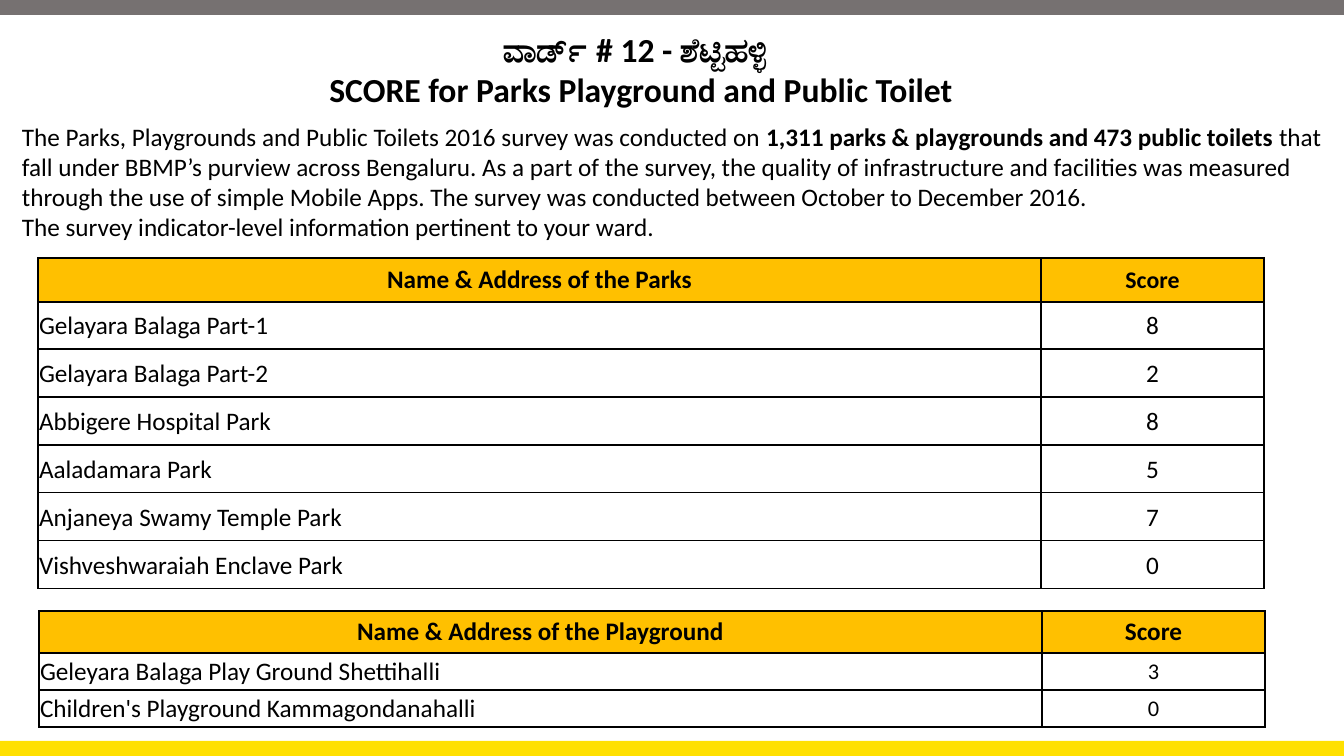
import dataclasses

import lxml.etree
import pptx
import pptx.dml.color
import pptx.enum.shapes
import pptx.enum.text
import pptx.oxml.ns
import pptx.util

EMU_PER_PX = 914400 / 100.8


def px(length):
    return pptx.util.Emu(round(length * EMU_PER_PX))


def rgb(value):
    return pptx.dml.color.RGBColor.from_string(value)


@dataclasses.dataclass(frozen=True)
class Theme:
    font: str = "Calibri"
    ink: str = "000000"
    paper: str = "FFFFFF"
    header: str = "FFC000"
    top_band: str = "767171"
    bottom_band: str = "FFE000"
    title_size: int = 24
    body_size: int = 18
    small_header_size: int = 17
    small_score_size: int = 16
    border_width: int = 1


class SlideBuilder:
    def __init__(self, slide, theme):
        self.slide = slide
        self.theme = theme

    def band(self, left, top, width, height, color):
        shape = self.slide.shapes.add_shape(
            pptx.enum.shapes.MSO_SHAPE.RECTANGLE, px(left), px(top), px(width), px(height)
        )
        shape.shadow.inherit = False
        shape.fill.solid()
        shape.fill.fore_color.rgb = rgb(color)
        shape.line.fill.background()

    def run(self, paragraph, text, size, bold=False):
        run = paragraph.add_run()
        run.text = text
        run.font.name = self.theme.font
        run.font.size = pptx.util.Pt(size)
        run.font.bold = bold
        run.font.color.rgb = rgb(self.theme.ink)

    def text_box(self, left, top, width, height, paragraphs, size, alignment):
        box = self.slide.shapes.add_textbox(px(left), px(top), px(width), px(height))
        frame = box.text_frame
        frame.word_wrap = True
        frame.auto_size = pptx.enum.text.MSO_AUTO_SIZE.SHAPE_TO_FIT_TEXT
        for index, runs in enumerate(paragraphs):
            paragraph = frame.add_paragraph() if index else frame.paragraphs[0]
            paragraph.alignment = alignment
            for text, bold in runs:
                lines = text.split("\n")
                for number, line in enumerate(lines):
                    if number:
                        paragraph.add_line_break()
                    self.run(paragraph, line, size, bold)

    def borders(self, cell):
        properties = cell._tc.get_or_add_tcPr()
        for position, side in enumerate(("lnL", "lnR", "lnT", "lnB")):
            line = lxml.etree.Element(
                pptx.oxml.ns.qn(f"a:{side}"), w=str(pptx.util.Pt(self.theme.border_width))
            )
            fill = lxml.etree.SubElement(line, pptx.oxml.ns.qn("a:solidFill"))
            lxml.etree.SubElement(fill, pptx.oxml.ns.qn("a:srgbClr"), val=self.theme.ink)
            properties.insert(position, line)

    def cell(self, cell, text, size, is_header, is_centered):
        cell.fill.solid()
        cell.fill.fore_color.rgb = rgb(self.theme.header if is_header else self.theme.paper)
        cell.vertical_anchor = pptx.enum.text.MSO_ANCHOR.MIDDLE
        cell.margin_left = cell.margin_right = px(7 if is_header else 1)
        cell.margin_top = px(0 if is_header else 1)
        cell.margin_bottom = 0
        paragraph = cell.text_frame.paragraphs[0]
        align = pptx.enum.text.PP_ALIGN
        paragraph.alignment = align.CENTER if is_centered else align.LEFT
        self.run(paragraph, text, size, is_header)
        self.borders(cell)

    def score_table(self, left, top, heights, heading, scores, header_size, score_size):
        widths = (1003, 223)
        rows = [(heading, "Score"), *scores]
        table = self.slide.shapes.add_table(
            len(rows), len(widths), px(left), px(top), px(sum(widths)), px(sum(heights))
        ).table
        for column, width in zip(table.columns, widths):
            column.width = px(width)
        for index, (row, height) in enumerate(zip(rows, heights)):
            table.rows[index].height = px(height)
            is_header = index == 0
            name, score = row
            self.cell(table.cell(index, 0), name, self.theme.body_size, is_header, is_header)
            size = header_size if is_header else score_size
            self.cell(table.cell(index, 1), score, size, is_header, True)


def main():
    presentation = pptx.Presentation()
    presentation.slide_width = px(1344)
    presentation.slide_height = px(756)
    theme = Theme()
    builder = SlideBuilder(presentation.slides.add_slide(presentation.slide_layouts[6]), theme)
    align = pptx.enum.text.PP_ALIGN

    builder.band(0, 741, 1344, 15, theme.bottom_band)
    builder.band(0, 0, 1344, 15, theme.top_band)

    title = [
        [("ವಾರ್ಡ್ # 12 - ಶೆಟ್ಟಿಹಳ್ಳಿ ", True)],
        [("SCORE for Parks Playground and Public Toilet", True)],
    ]
    builder.text_box(174, 24, 934, 92, title, theme.title_size, align.CENTER)

    introduction = [[
        ("The Parks, Playgrounds and Public Toilets 2016 survey was conducted on", False),
        (" 1,311 parks & playgrounds and 473 public toilets", True),
        (
            " that fall under BBMP’s purview across Bengaluru. As a part of the survey, "
            "the quality of infrastructure and facilities was measured through the use of "
            "simple Mobile Apps. The survey was conducted between October to December 2016. \n"
            "The survey indicator-level information pertinent to your ward.",
            False,
        ),
    ]]
    builder.text_box(12, 116, 1320, 132, introduction, theme.body_size, align.LEFT)

    parks = [
        ("Gelayara Balaga Part-1", "8"),
        ("Gelayara Balaga Part-2", "2"),
        ("Abbigere Hospital Park", "8"),
        ("Aaladamara Park", "5"),
        ("Anjaneya Swamy Temple Park", "7"),
        ("Vishveshwaraiah Enclave Park", "0"),
    ]
    builder.score_table(
        38, 258, [44, 47] + [48] * 5, "Name & Address of the Parks", parks,
        theme.small_header_size, theme.body_size,
    )

    playgrounds = [
        ("Geleyara Balaga Play Ground Shettihalli", "3"),
        ("Children's Playground Kammagondanahalli", "0"),
    ]
    builder.score_table(
        39, 611, [42, 37, 37], "Name & Address of the Playground", playgrounds,
        theme.body_size, theme.small_score_size,
    )

    presentation.save("out.pptx")


if __name__ == "__main__":
    main()
